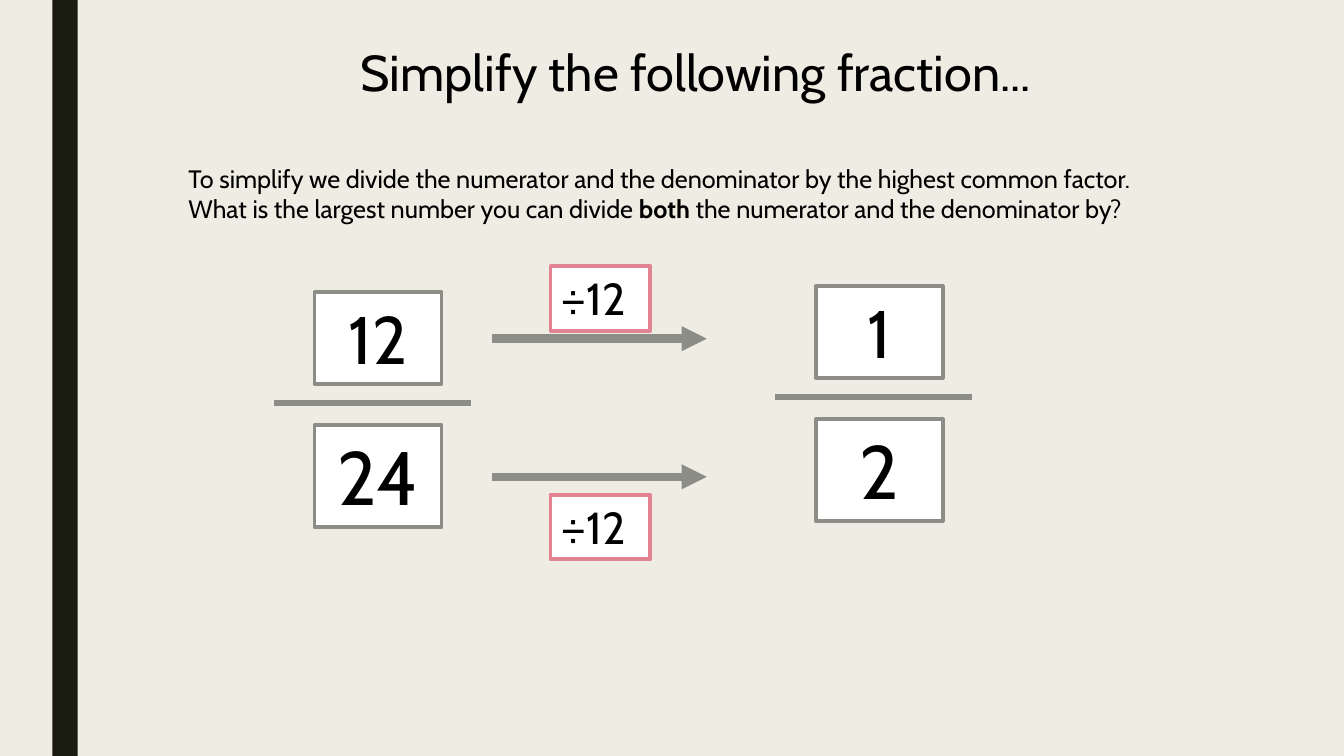
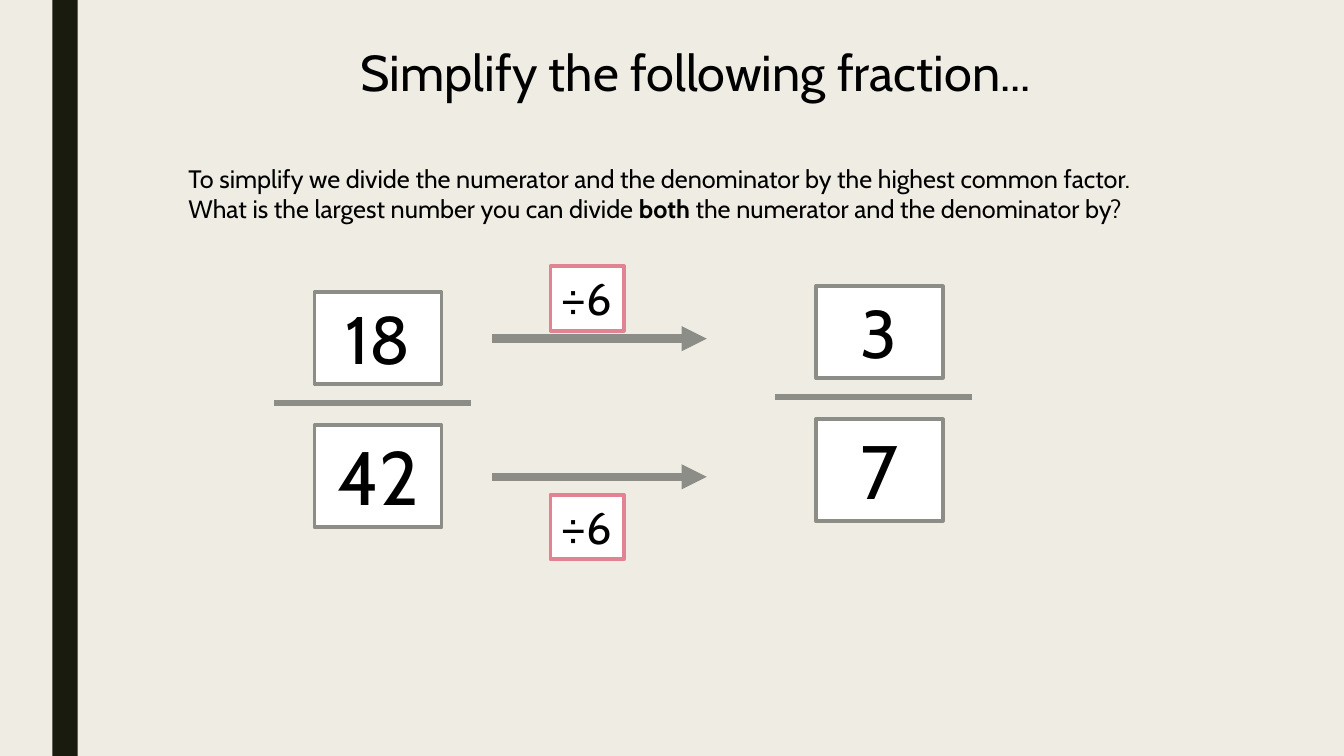
"""Builds two slides that simplify fractions step by step."""
from dataclasses import dataclass

import pptx
import pptx.chart.data
import pptx.dml.color
import pptx.enum.shapes
import pptx.enum.text
import pptx.oxml
import pptx.oxml.ns
import pptx.util

TITLE = "Simplify the following fraction... "
GUIDE = [
    [("To simplify we divide the numerator and the denominator by the highest common factor.", False)],
    [
        ("What is the largest number you can divide ", False),
        ("both", True),
        (" the numerator and the denominator by?", False),
    ],
]
EXERCISES = [
    {"start": ("12", "24"), "factor": "÷12", "factor_width": 99, "answer": ("1", "2")},
    {"start": ("18", "42"), "factor": "÷6", "factor_width": 73, "answer": ("3", "7")},
]

PX = pptx.util.Inches(1) // 100
SLIDE_SIZE = (1333, 750)
BAND = (52, 0, 25, 750)
TITLE_BOX = (177, 36, 1038, 71)
GUIDE_BOX = (177, 157, 1106, 71)
START_AT = (272, 290)
ANSWER_AT = (769, 284)
ARROW_LEFT, ARROW_RIGHT = 488, 701
FACTOR_LEFT, FACTOR_HEIGHT = 546, 64
STEPS = [(336, 264), (473, 491)]
BAR_WIDTH, BAR_DROP, BOX_WIDTH = 195, 110, 126


@dataclass(frozen=True)
class Theme:
    font: str = "Cabin"
    paper: str = "EFEDE3"
    band: str = "191B0E"
    ink: str = "000000"
    box: str = "FFFFFF"
    gray: str = "8C8D86"
    pink: str = "E28394"
    title_size: int = 36
    guide_size: int = 18
    factor_size: int = 32
    top_size: int = 48
    bottom_size: int = 54
    outline: float = 2.75
    bar: float = 4.5
    arrow: float = 6


THEME = Theme()
ALIGN = pptx.enum.text.PP_ALIGN


def emu(lengths):
    return [length * PX for length in lengths]


def rgb(code):
    return pptx.dml.color.RGBColor.from_string(code)


def paint(fill, code):
    fill.solid()
    fill.fore_color.rgb = rgb(code)


def write(shape, lines, size, align=ALIGN.LEFT, wrap=True):
    frame = shape.text_frame
    frame.word_wrap = wrap
    frame.auto_size = pptx.enum.text.MSO_AUTO_SIZE.SHAPE_TO_FIT_TEXT
    frame.vertical_anchor = pptx.enum.text.MSO_ANCHOR.TOP
    for index, line in enumerate(lines):
        para = frame.add_paragraph() if index else frame.paragraphs[0]
        para.alignment = align
        for text, bold in line:
            span = para.add_run()
            span.text = text
            span.font.name = THEME.font
            span.font.size = pptx.util.Pt(size)
            span.font.bold = bold
            span.font.color.rgb = rgb(THEME.ink)


def add_number(shapes, place, text, size, outline, align=ALIGN.CENTER, wrap=True):
    box = shapes.add_textbox(*emu(place))
    paint(box.fill, THEME.box)
    box.line.color.rgb = rgb(outline)
    box.line.width = pptx.util.Pt(THEME.outline)
    write(box, [[(text, False)]], size, align, wrap)


def add_line(shapes, left, right, y, width, arrow=False):
    straight = pptx.enum.shapes.MSO_CONNECTOR.STRAIGHT
    line = shapes.add_connector(straight, *emu((left, y, right, y)))
    line.line.color.rgb = rgb(THEME.gray)
    line.line.width = pptx.util.Pt(width)
    properties = line.element.spPr
    if arrow:
        head = pptx.oxml.xmlchemy.OxmlElement("a:tailEnd")
        head.set("type", "triangle")
        properties.find(pptx.oxml.ns.qn("a:ln")).append(head)
    properties.append(pptx.oxml.xmlchemy.OxmlElement("a:effectLst"))


def add_fraction(page, origin, numbers):
    left, top = origin
    shapes = page.shapes.add_group_shape().shapes
    box_left = left + 40
    numerator, denominator = numbers
    add_number(shapes, (box_left, top, BOX_WIDTH, 91), numerator, THEME.top_size, THEME.gray)
    add_number(shapes, (box_left, top + 132, BOX_WIDTH, 101), denominator, THEME.bottom_size, THEME.gray)
    add_line(shapes, left, left + BAR_WIDTH, top + BAR_DROP, THEME.bar)


def add_exercise(deck, layout, exercise):
    page = deck.slides.add_slide(layout)
    write(page.shapes.title, [[(TITLE, False)]], THEME.title_size, ALIGN.CENTER)
    add_fraction(page, START_AT, exercise["start"])
    write(page.shapes.add_textbox(*emu(GUIDE_BOX)), GUIDE, THEME.guide_size)
    for arrow_y, factor_top in STEPS:
        add_line(page.shapes, ARROW_LEFT, ARROW_RIGHT, arrow_y, THEME.arrow, arrow=True)
        place = (FACTOR_LEFT, factor_top, exercise["factor_width"], FACTOR_HEIGHT)
        add_number(page.shapes, place, exercise["factor"], THEME.factor_size,
                   THEME.pink, ALIGN.LEFT, wrap=False)
    add_fraction(page, ANSWER_AT, exercise["answer"])
    return page


def style_layout(layout, page):
    paint(layout.background.fill, THEME.paper)
    rectangle = pptx.enum.shapes.MSO_SHAPE.RECTANGLE
    band = page.shapes.add_shape(rectangle, *emu(BAND))
    band.shadow.inherit = False
    paint(band.fill, THEME.band)
    band.line.fill.background()
    layout.element.cSld.spTree.append(band.element)
    title = layout.placeholders[0]
    title.left, title.top, title.width, title.height = emu(TITLE_BOX)


def main():
    deck = pptx.Presentation()
    deck.slide_width, deck.slide_height = emu(SLIDE_SIZE)
    layout = deck.slide_layouts.get_by_name("Title Only")
    pages = [add_exercise(deck, layout, exercise) for exercise in EXERCISES]
    style_layout(layout, pages[0])
    deck.save("out.pptx")


if __name__ == "__main__":
    main()
